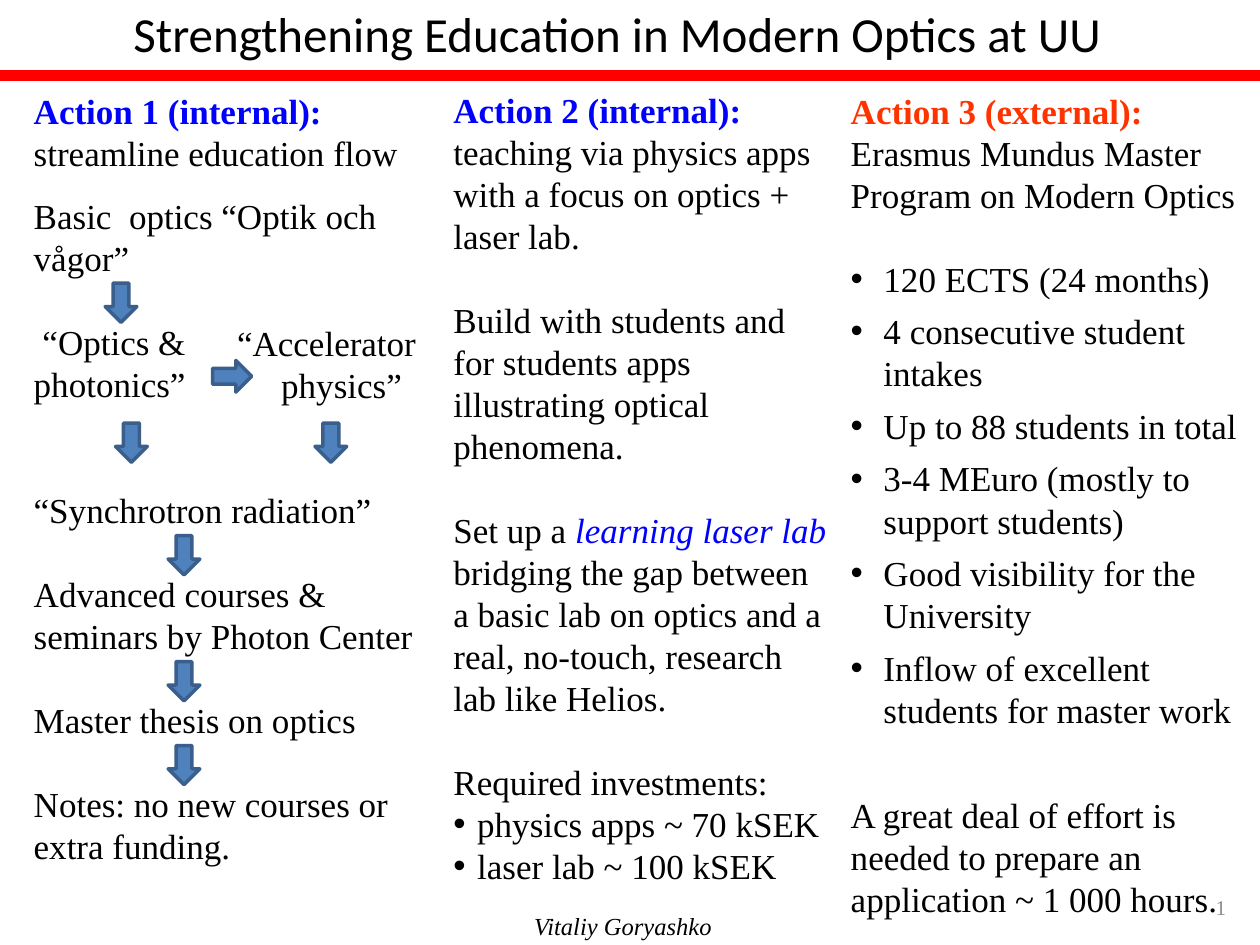
from dataclasses import dataclass

from lxml.etree import SubElement
from pptx import Presentation
from pptx.dml.color import RGBColor as Rgb
from pptx.enum.shapes import MSO_CONNECTOR as Connector, MSO_SHAPE as Preset
from pptx.enum.text import MSO_ANCHOR as Anchor, MSO_AUTO_SIZE as AutoSize, PP_ALIGN as Align
from pptx.oxml.ns import qn
from pptx.util import Cm, Pt


@dataclass(frozen=True)
class Theme:
    heading_font: str = "Calibri"
    text_font: str = "Times New Roman"
    black: str = "000000"
    blue: str = "0000FF"
    orange: str = "FF3300"
    red: str = "FF0000"
    grey: str = "8C8C8C"
    arrow_fill: str = "4F81BD"
    arrow_line: str = "3A5F8C"
    title_size: int = 28
    body_size: int = 20
    author_size: int = 14
    number_size: int = 12


THEME = Theme()
GAP = 24  # points, one body line


@dataclass(frozen=True)
class Box:
    """Position and size in centimetres."""
    left: float
    top: float
    width: float
    height: float

    def lengths(self) -> tuple:
        return Cm(self.left), Cm(self.top), Cm(self.width), Cm(self.height)


@dataclass(frozen=True)
class Span:
    text: str
    color: str = THEME.black
    bold: bool = False
    italic: bool = False
    size: int = THEME.body_size
    font: str = THEME.text_font


@dataclass(frozen=True)
class Para:
    """A paragraph; spacing in points, left indent in centimetres."""
    spans: tuple
    before: float = 0
    after: float = 0
    indent: float = 0
    bulleted: bool = False
    align: Align = Align.LEFT


@dataclass(frozen=True)
class Column:
    box: Box
    side_inset: float
    paras: tuple


@dataclass(frozen=True)
class Arrow:
    left: float
    top: float
    rotation: float = 0


def plain(text: str, **layout) -> Para:
    return Para((Span(text),), **layout)


def heading(text: str, color: str) -> Para:
    return Para((Span(text, color, bold=True),))


def bullets(texts: tuple, indent: float, first_gap: float = 0, after: float = 0) -> tuple:
    return tuple(plain(text, before=0 if index else first_gap, after=after,
                       indent=indent, bulleted=True)
                 for index, text in enumerate(texts))


def set_indent(para, indent: float, bulleted: bool) -> None:
    """Indent a paragraph, hanging its first line when it has a bullet."""
    props = para._p.get_or_add_pPr()
    props.set("marL", str(Cm(indent)))
    props.set("indent", str(-Cm(indent) if bulleted else 0))
    if bulleted:
        SubElement(props, qn("a:buFont"), typeface="Arial")
        SubElement(props, qn("a:buChar"), char="•")
    else:
        SubElement(props, qn("a:buNone"))


def write(shape, box: Box, paras: tuple, side: float = 0, edge: float = 0.13,
          wrap: bool = True, anchor: Anchor = Anchor.TOP) -> None:
    shape.left, shape.top, shape.width, shape.height = box.lengths()
    frame = shape.text_frame
    frame_format = {"auto_size": AutoSize.NONE, "word_wrap": wrap, "vertical_anchor": anchor,
                    "margin_left": Cm(side), "margin_right": Cm(side),
                    "margin_top": Cm(edge), "margin_bottom": Cm(edge)}
    for name, value in frame_format.items():
        setattr(frame, name, value)
    for index, item in enumerate(paras):
        para = frame.add_paragraph() if index else frame.paragraphs[0]
        para_format = {"alignment": item.align, "space_before": Pt(item.before),
                       "space_after": Pt(item.after)}
        for name, value in para_format.items():
            setattr(para, name, value)
        set_indent(para, item.indent, item.bulleted)
        for span in item.spans:
            run = para.add_run()
            run.text = span.text
            font_format = {"name": span.font, "size": Pt(span.size),
                           "bold": span.bold, "italic": span.italic}
            for name, value in font_format.items():
                setattr(run.font, name, value)
            run.font.color.rgb = Rgb.from_string(span.color)


def add_text(page, box: Box, paras: tuple, **layout) -> None:
    write(page.shapes.add_textbox(*box.lengths()), box, paras, **layout)


def draw_arrow(page, arrow: Arrow) -> None:
    shape = page.shapes.add_shape(Preset.DOWN_ARROW,
                                  *Box(arrow.left, arrow.top, 0.64, 0.79).lengths())
    shape.shadow.inherit = False
    shape.rotation = arrow.rotation
    shape.fill.solid()
    shape.fill.fore_color.rgb = Rgb.from_string(THEME.arrow_fill)
    shape.line.color.rgb = Rgb.from_string(THEME.arrow_line)
    shape.line.width = Pt(2)


def draw_rule(page, top: float, width: int) -> None:
    rule = page.shapes.add_connector(Connector.STRAIGHT, 0, Cm(top), width, Cm(top))
    rule.line.color.rgb = Rgb.from_string(THEME.red)
    rule.line.width = Pt(6)
    SubElement(rule._element.spPr, qn("a:effectLst"))


COLUMNS = (
    Column(Box(0.43, 1.67, 8.46, 16.08), 0.25, (
        heading("Action 1 (internal):", THEME.blue),
        plain("streamline education flow"),
        plain("Basic  optics “Optik och vågor”", before=GAP / 2),
        plain(" “Optics &", before=GAP),
        plain("photonics”"),
        plain("“Synchrotron radiation”", before=2 * GAP),
        plain("Advanced courses & seminars by Photon Center", before=GAP),
        plain("Master thesis on optics", before=GAP),
        plain("Notes: no new courses or extra funding.", before=GAP),
    )),
    Column(Box(8.89, 1.65, 8.05, 16.51), 0.25, (
        heading("Action 2 (internal):", THEME.blue),
        plain("teaching via physics apps with a focus on optics + laser lab."),
        plain("Build with students and for students apps illustrating optical phenomena.",
              before=GAP),
        Para((Span("Set up a "), Span("learning laser lab ", THEME.blue, italic=True),
              Span("bridging the gap between a basic lab on optics and a real, "
                   "no-touch, research lab like Helios.")), before=GAP),
        plain("Required investments:", before=GAP),
        *bullets(("physics apps ~ 70 kSEK", "laser lab ~ 100 kSEK"), 0.48),
    )),
    Column(Box(17.15, 1.67, 8.05, 17.15), 0, (
        heading("Action 3 (external):", THEME.orange),
        plain("Erasmus Mundus Master Program on Modern Optics"),
        *bullets(("120 ECTS (24 months)", "4 consecutive student intakes",
                  "Up to 88 students in total", "3-4 MEuro (mostly to support students)",
                  "Good visibility for the University",
                  "Inflow of excellent students for master work"),
                 0.66, first_gap=GAP, after=6),
        plain("A great deal of effort is needed to prepare an application ~ 1 000 hours.",
              before=GAP + 6, after=6),
    )),
)
PARALLEL_COURSE = (plain("“Accelerator"), plain("physics”", indent=0.89))
ARROWS = (Arrow(2.12, 5.71), Arrow(2.33, 8.53), Arrow(6.35, 8.53),
          *(Arrow(3.39, top) for top in (10.8, 13.34, 15.03)),
          Arrow(4.36, 7.19, rotation=270))


def main() -> None:
    deck = Presentation()
    deck.slide_width, deck.slide_height = Cm(25.4), Cm(19.05)
    page = deck.slides.add_slide(deck.slide_layouts.get_by_name("Comparison"))
    title, *bodies = page.placeholders
    draw_rule(page, 1.52, deck.slide_width)
    title_span = Span("Strengthening Education in Modern Optics at UU",
                      size=THEME.title_size, font=THEME.heading_font)
    write(title, Box(2.69, 0.08, 19.96, 1.19), (Para((title_span,)),), edge=0, wrap=False)
    for body, column in zip(bodies, COLUMNS):
        write(body, column.box, column.paras, column.side_inset)
    for spare in bodies[len(COLUMNS):]:
        spare.element.getparent().remove(spare.element)
    add_text(page, Box(4.78, 6.35, 4.1, 1.95), PARALLEL_COURSE)
    for arrow in ARROWS:
        draw_arrow(page, arrow)

    author = Span("Vitaliy Goryashko", italic=True, size=THEME.author_size)
    add_text(page, Box(10.77, 18.24, 3.76, 0.76), (Para((author,)),))
    number = Span("1", THEME.grey, size=THEME.number_size)
    add_text(page, Box(19.05, 17.78, 5.92, 1.02), (Para((number,), align=Align.RIGHT),),
             side=0.25, anchor=Anchor.MIDDLE)
    deck.save("out.pptx")


if __name__ == "__main__":
    main()
